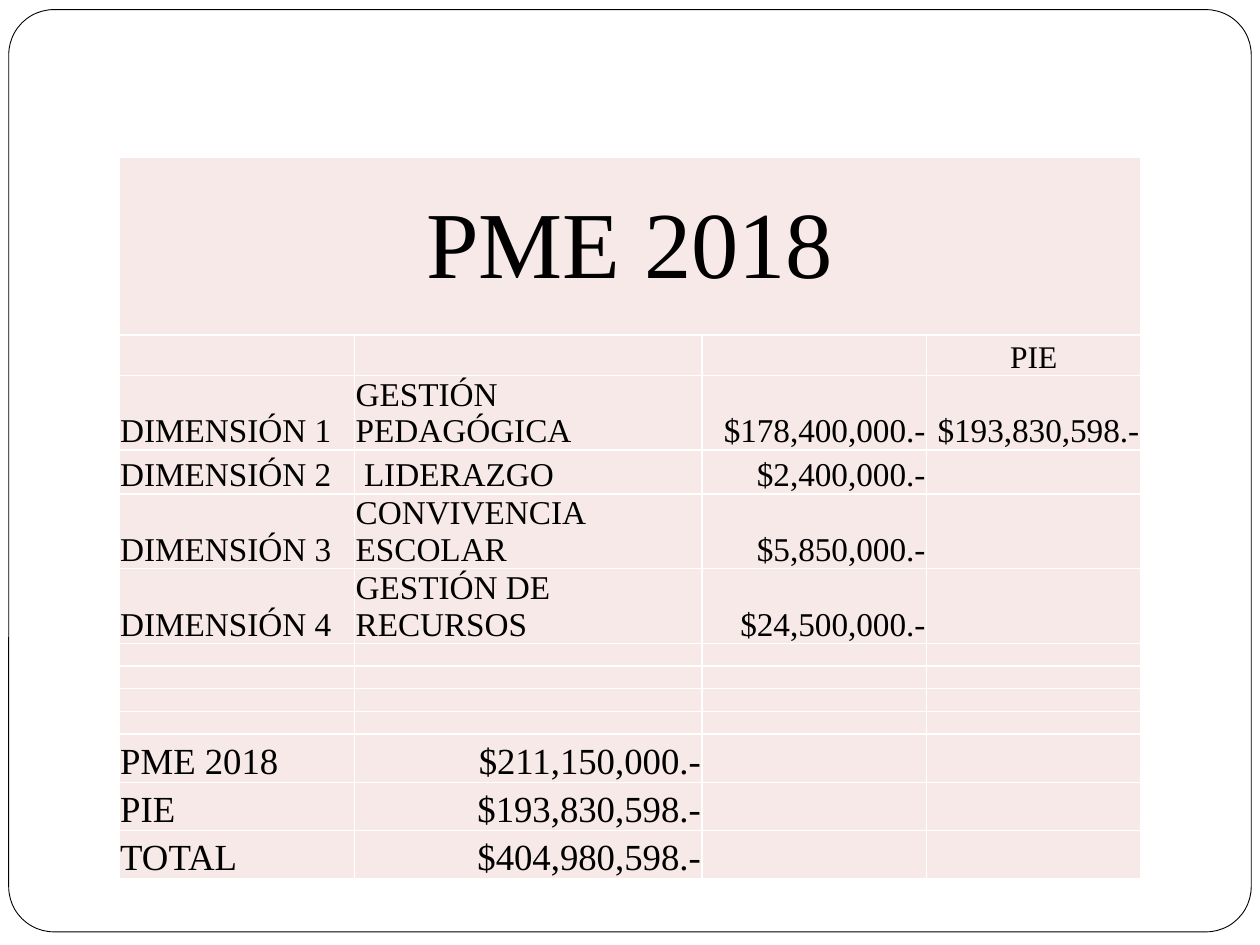
from lxml import etree
from pptx import Presentation
from pptx.dml.color import RGBColor
from pptx.enum import shapes, text
from pptx.oxml import ns
from pptx.util import Pt

BLACK = RGBColor(0, 0, 0)
WHITE = RGBColor(255, 255, 255)
PINK = RGBColor(0xF7, 0xE9, 0xE8)
FONT = "Times New Roman"
L, C, R = text.PP_ALIGN.LEFT, text.PP_ALIGN.CENTER, text.PP_ALIGN.RIGHT

# Content: row height, text size, cell texts
EMPTY = (13, 8, [])
ROWS = [
    (101.5, 54, ["PME 2018"]),
    (23, 18, ["", "", "", "PIE"]),
    (25, 19, ["DIMENSIÓN 1", "GESTIÓN PEDAGÓGICA", "$178,400,000.-", "$193,830,598.-"]),
    (25, 19, ["DIMENSIÓN 2", " LIDERAZGO", "$2,400,000.-"]),
    (25, 19, ["DIMENSIÓN 3", "CONVIVENCIA ESCOLAR", "$5,850,000.-"]),
    (25, 19, ["DIMENSIÓN 4", "GESTIÓN DE RECURSOS", "$24,500,000.-"]),
    EMPTY, EMPTY, EMPTY, EMPTY,
    (27.5, 21, ["PME 2018", "$211,150,000.-"]),
    (27.5, 21, ["PIE", "$193,830,598.-"]),
    (27.5, 21, ["TOTAL", "$404,980,598.-"]),
]
COLS = [134.6, 198.6, 128.4, 122.2]


def add_borders(cell):
    tc_pr = cell._tc.get_or_add_tcPr()
    for side in ("a:lnL", "a:lnR", "a:lnT", "a:lnB"):
        ln = etree.SubElement(tc_pr, ns.qn(side), w=str(Pt(1)))
        fill = etree.SubElement(ln, ns.qn("a:solidFill"))
        etree.SubElement(fill, ns.qn("a:srgbClr"), val=str(WHITE))


def write_cell(cell, words, size, align, anchor):
    add_borders(cell)
    cell.fill.solid()
    cell.fill.fore_color.rgb = PINK
    cell.margin_left = cell.margin_right = cell.margin_top = Pt(0.7)
    cell.margin_bottom = 0
    cell.vertical_anchor = anchor
    p = cell.text_frame.paragraphs[0]
    p.alignment = align
    if words:
        r = p.add_run()
        r.text = words
        r.font.name, r.font.size = FONT, Pt(size)
        r.font.color.rgb = BLACK
    else:
        # Small text size keeps an empty row at its set height
        etree.SubElement(p._p, ns.qn("a:endParaRPr"), sz="800")


def alignment(words, row):
    if row < 2:
        return C
    return R if words.startswith("$") else L


prs = Presentation()
prs.slide_width, prs.slide_height = Pt(720), Pt(540)
s = prs.slides.add_slide(prs.slide_layouts[6])

# Rounded frame
frame = s.shapes.add_shape(shapes.MSO_SHAPE.ROUNDED_RECTANGLE,
                           Pt(5), Pt(5.5), Pt(710), Pt(527))
frame.adjustments[0] = 0.049
frame.shadow.inherit = False
frame.fill.solid()
frame.fill.fore_color.rgb = WHITE
frame.line.color.rgb = BLACK
frame.line.width = Pt(0.5)

# Budget table
height = sum(h for h, _, _ in ROWS)
table = s.shapes.add_table(len(ROWS), len(COLS), Pt(68), Pt(90),
                           Pt(sum(COLS)), Pt(height)).table
table.first_row = table.horz_banding = False
for column, width in zip(table.columns, COLS):
    column.width = Pt(width)
for i, (h, size, texts) in enumerate(ROWS):
    table.rows[i].height = Pt(h)
    anchor = text.MSO_ANCHOR.BOTTOM if i else text.MSO_ANCHOR.MIDDLE
    for j in range(len(COLS)):
        words = texts[j] if j < len(texts) else ""
        write_cell(table.cell(i, j), words, size, alignment(words, i), anchor)
table.cell(0, 0).merge(table.cell(0, len(COLS) - 1))

prs.save("out.pptx")
